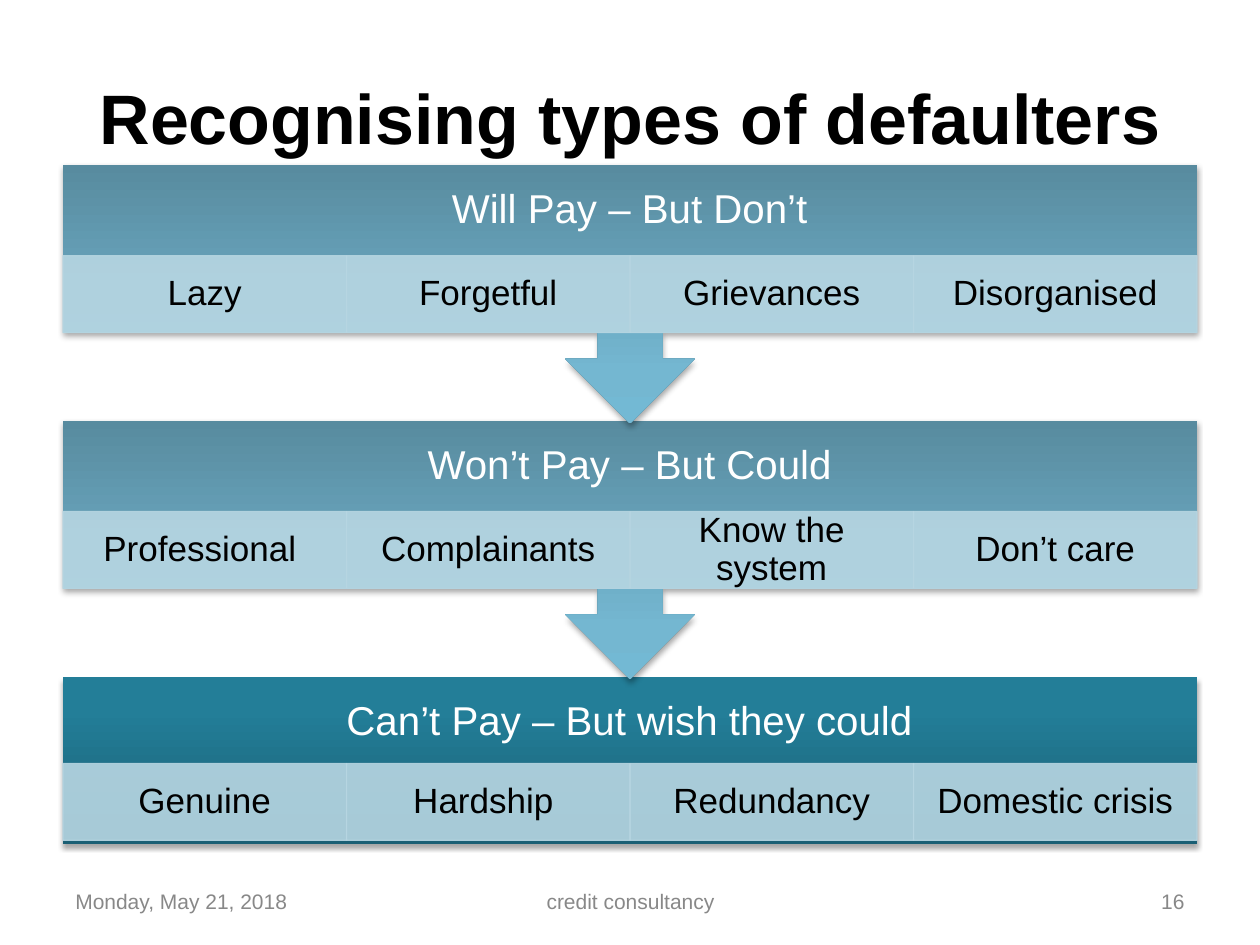
import pptx
import pptx.dml.color
import pptx.enum.shapes
import pptx.enum.text
import pptx.oxml
import pptx.oxml.ns
import pptx.util
import lxml.etree

Inches = pptx.util.Inches
RGBColor = pptx.dml.color.RGBColor
ALIGN = pptx.enum.text.PP_ALIGN
SHAPE = pptx.enum.shapes.MSO_SHAPE
qn = pptx.oxml.ns.qn

BLACK = RGBColor(0, 0, 0)
WHITE = RGBColor(255, 255, 255)
GREY = RGBColor(0x88, 0x88, 0x88)
PALE = RGBColor(0xB7, 0xD6, 0xE2)
LIGHT = [
    (0, RGBColor(0x58, 0x8B, 0x9F)),
    (80, RGBColor(0x74, 0xB7, 0xD1)),
    (100, RGBColor(0x73, 0xB9, 0xD4)),
]
DEEP = [
    (0, RGBColor(0x1A, 0x5F, 0x74)),
    (80, RGBColor(0x23, 0x7E, 0x98)),
    (100, RGBColor(0x21, 0x7F, 0x9B)),
]

LEFT, WIDTH = 0.5, 9
TOP, STEP = 1.31, 2.03
HEAD = 0.72
BANDS = [
    ("Will Pay – But Don’t",
     ["Lazy", "Forgetful", "Grievances", "Disorganised"]),
    ("Won’t Pay – But Could",
     ["Professional ", "Complainants", "Know the system", "Don’t care"]),
    ("Can’t Pay – But wish they could",
     ["Genuine", "Hardship ", "Redundancy", "Domestic crisis"]),
]


def add_node(parent, tag, **attrs):
    node = lxml.etree.SubElement(parent, qn(tag))
    for key, value in attrs.items():
        node.set(key, str(value))
    return node


def write(shape, text, size, color, align=ALIGN.CENTER, pad=(0.1, 0.05),
          space=None, bold=False):
    frame = shape.text_frame
    frame.word_wrap = True
    frame.vertical_anchor = pptx.enum.text.MSO_ANCHOR.MIDDLE
    frame.margin_left = frame.margin_right = Inches(pad[0])
    frame.margin_top = frame.margin_bottom = Inches(pad[1])
    frame.text = text
    para = frame.paragraphs[0]
    para.alignment = align
    para.line_spacing = space
    font = para.runs[0].font
    font.name = "Arial"
    font.size = pptx.util.Pt(size)
    font.bold = bold
    font.color.rgb = color


def add_label(slide, box, text, size, color, **style):
    label = slide.shapes.add_textbox(*map(Inches, box))
    write(label, text, size, color, **style)


def shade(shape, stops):
    shape.fill.gradient()
    shape.fill.gradient_angle = 90
    group = shape.element.spPr.find(".//" + qn("a:gsLst"))
    for stop in list(group):
        group.remove(stop)
    for place, color in stops:
        stop = add_node(group, "a:gs", pos=place * 1000)
        add_node(stop, "a:srgbClr", val=color)


def cast(shape):
    shape.shadow.inherit = False
    effects = shape.element.spPr.find(qn("a:effectLst"))
    shadow = add_node(effects, "a:outerShdw", blurRad=pptx.util.Pt(3.1),
                      dist=pptx.util.Pt(1.8), dir=5400000, rotWithShape=0)
    color = add_node(shadow, "a:srgbClr", val=BLACK)
    add_node(color, "a:alpha", val=35000)


def add_block(slide, top, last):
    kind = SHAPE.RECTANGLE if last else SHAPE.UP_ARROW_CALLOUT
    height = 1.33 if last else 2.05
    block = slide.shapes.add_shape(
        kind, *map(Inches, (LEFT, top, WIDTH, height)))
    if not last:
        block.rotation = 180
        for index, value in enumerate((0.25, 0.25, 0.25, 0.65)):
            block.adjustments[index] = value
    shade(block, DEEP if last else LIGHT)
    block.line.fill.background()
    cast(block)


def add_cell(slide, box, text):
    cell = slide.shapes.add_shape(SHAPE.RECTANGLE, *map(Inches, box))
    cell.shadow.inherit = False
    cell.fill.solid()
    cell.fill.fore_color.rgb = PALE
    cell.line.color.rgb = PALE
    cell.line.width = pptx.util.Pt(0.75)
    for color in cell.element.spPr.iter(qn("a:srgbClr")):
        add_node(color, "a:alpha", val=90000)
    write(cell, text, 20, BLACK, pad=(0.16, 0.03), space=0.9)


def add_band(slide, index):
    title, items = BANDS[index]
    last = index == len(BANDS) - 1
    top = TOP + index * STEP
    add_block(slide, top, last)
    add_label(slide, (LEFT, top, WIDTH, HEAD), title, 23, WHITE,
              pad=(0.18, 0.18), space=0.9)
    width = WIDTH / len(items)
    row = top + (0.69 if last else HEAD)
    for place, text in enumerate(items):
        add_cell(slide, (LEFT + place * width, row, width, 0.61), text)


def main():
    deck = pptx.Presentation()
    deck.slide_width, deck.slide_height = Inches(10), Inches(7.5)
    slide = deck.slides.add_slide(deck.slide_layouts[6])
    for left, width, text, align in (
        (0.5, 2.33, "Monday, May 21, 2018", ALIGN.LEFT),
        (3.42, 3.17, "credit consultancy", ALIGN.CENTER),
        (7.17, 2.33, "16", ALIGN.RIGHT),
    ):
        add_label(slide, (left, 6.95, width, 0.4), text, 12, GREY, align=align)
    add_label(slide, (LEFT, 0.3, WIDTH, 1.25),
              "Recognising types of defaulters", 40, BLACK, bold=True)
    for index in reversed(range(len(BANDS))):
        add_band(slide, index)
    deck.save("out.pptx")


if __name__ == "__main__":
    main()
